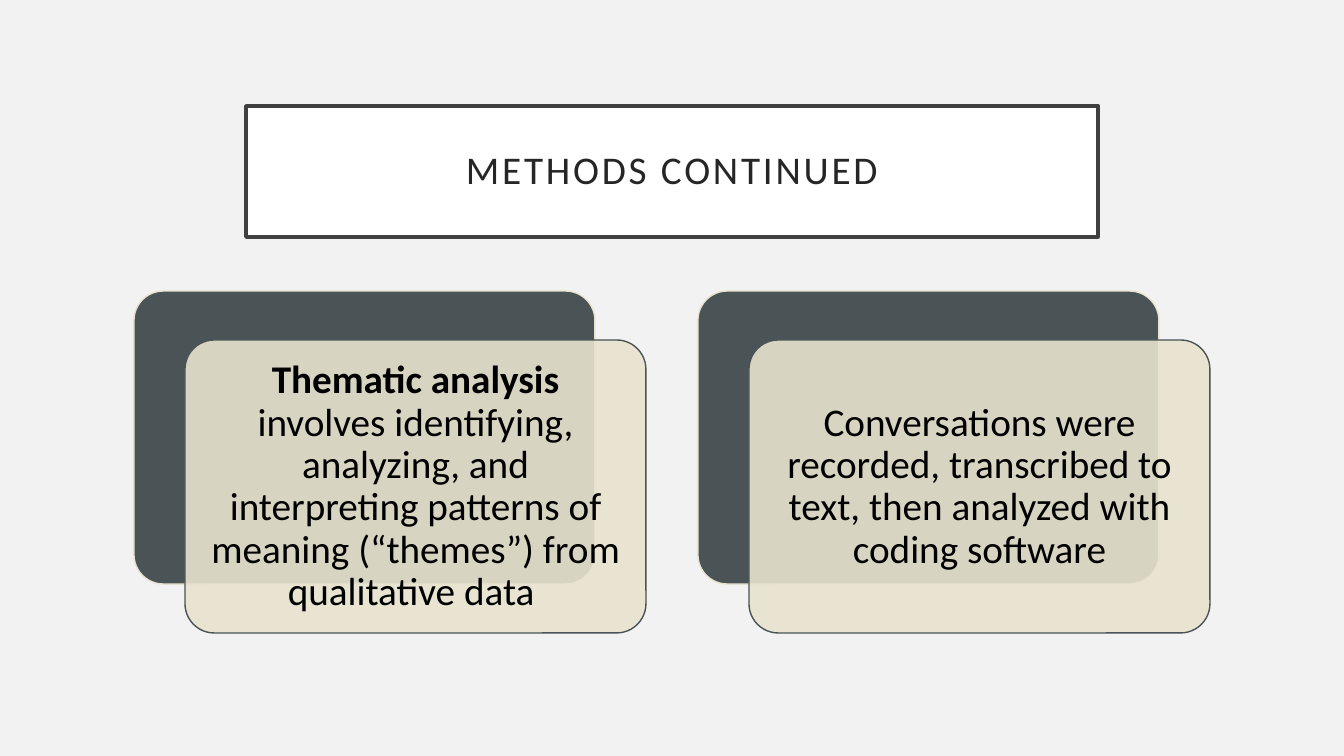
from lxml import etree
from pptx import Presentation
from pptx.dml.color import RGBColor
from pptx.enum.shapes import MSO_SHAPE
from pptx.enum.text import MSO_ANCHOR, PP_ALIGN
from pptx.oxml.ns import qn
from pptx.util import Pt

RECTANGLE = MSO_SHAPE.RECTANGLE
ROUNDED = MSO_SHAPE.ROUNDED_RECTANGLE
MIDDLE = MSO_ANCHOR.MIDDLE
CENTER = PP_ALIGN.CENTER
PX = 914400 / 100.8
SLATE, SAND = "4A5356", "E8E3CE"


def add_panel(kind, bounds, fill, line, line_width):
    panel = page.shapes.add_shape(kind, *[round(n * PX) for n in bounds])
    panel.shadow.inherit = False
    panel.fill.solid()
    panel.fill.fore_color.rgb = RGBColor.from_string(fill)
    panel.line.color.rgb = RGBColor.from_string(line)
    panel.line.width = Pt(line_width)
    if kind == ROUNDED:
        panel.adjustments[0] = 0.1
    return panel


def write_centred(box, spans, color, inset):
    """Fill the box with one paragraph made of (text, bold) spans."""
    frame = box.text_frame
    frame.word_wrap = True
    frame.vertical_anchor = MIDDLE
    frame.margin_left = frame.margin_right = round(inset * PX)
    frame.margin_top = frame.margin_bottom = round(inset * PX)
    para = frame.paragraphs[0]
    para.alignment = CENTER
    para.line_spacing = 0.9
    for text, bold in spans:
        span = para.add_run()
        span.text = text
        span.font.name = "Calibri"
        span.font.size = Pt(28)
        span.font.bold = bold
        span.font.color.rgb = RGBColor.from_string(color)
    return para


deck = Presentation()
deck.slide_width = round(1344 * PX)
deck.slide_height = round(756 * PX)
page = deck.slides.add_slide(deck.slide_layouts[6])
page.background.fill.solid()
page.background.fill.fore_color.rgb = RGBColor.from_string("F2F2F2")

title = add_panel(RECTANGLE, (246, 106, 852, 131), "FFFFFF", "404040", 2.5)
heading = write_centred(title, [("METHODS CONTINUED", False)], "262626", 20)
heading.runs[0].font._element.set("spc", "200")

cards = [
    [("Thematic analysis ", True),
     ("involves identifying, analyzing, and interpreting patterns of "
      "meaning (“themes”) from qualitative data ", False)],
    [("Conversations were recorded, transcribed to text, then analyzed "
      "with coding software", False)],
]
for index, spans in enumerate(cards):
    left = 134 + 564 * index
    add_panel(ROUNDED, (left, 291, 461, 293), SLATE, SAND, 1)
    front = add_panel(ROUNDED, (left + 51, 340, 461, 293), SAND, SLATE, 1)
    color = front.fill._xPr.find(qn("a:solidFill"))[0]
    etree.SubElement(color, qn("a:alpha")).set("val", "90000")
    bounds = (left + 59, 349, 445, 276)
    box = page.shapes.add_textbox(*[round(n * PX) for n in bounds])
    write_centred(box, spans, "000000", 12)

deck.save("out.pptx")
